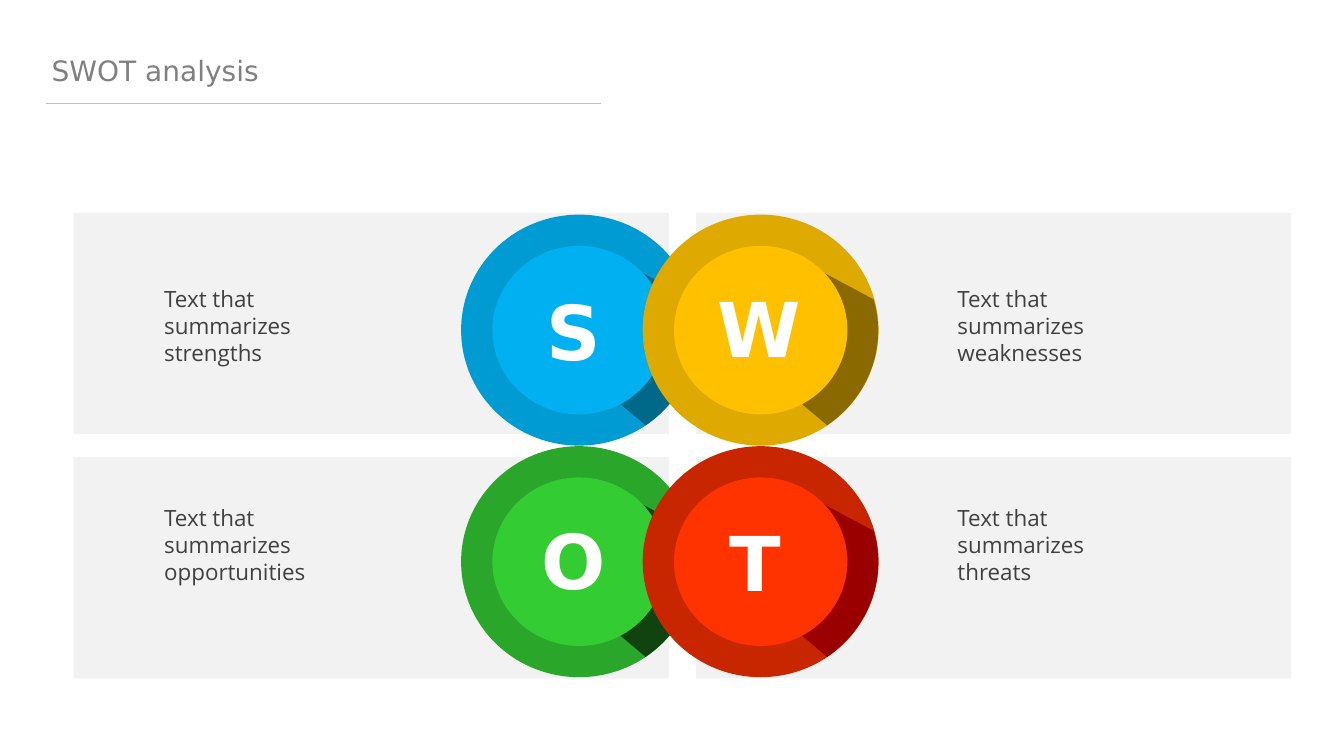
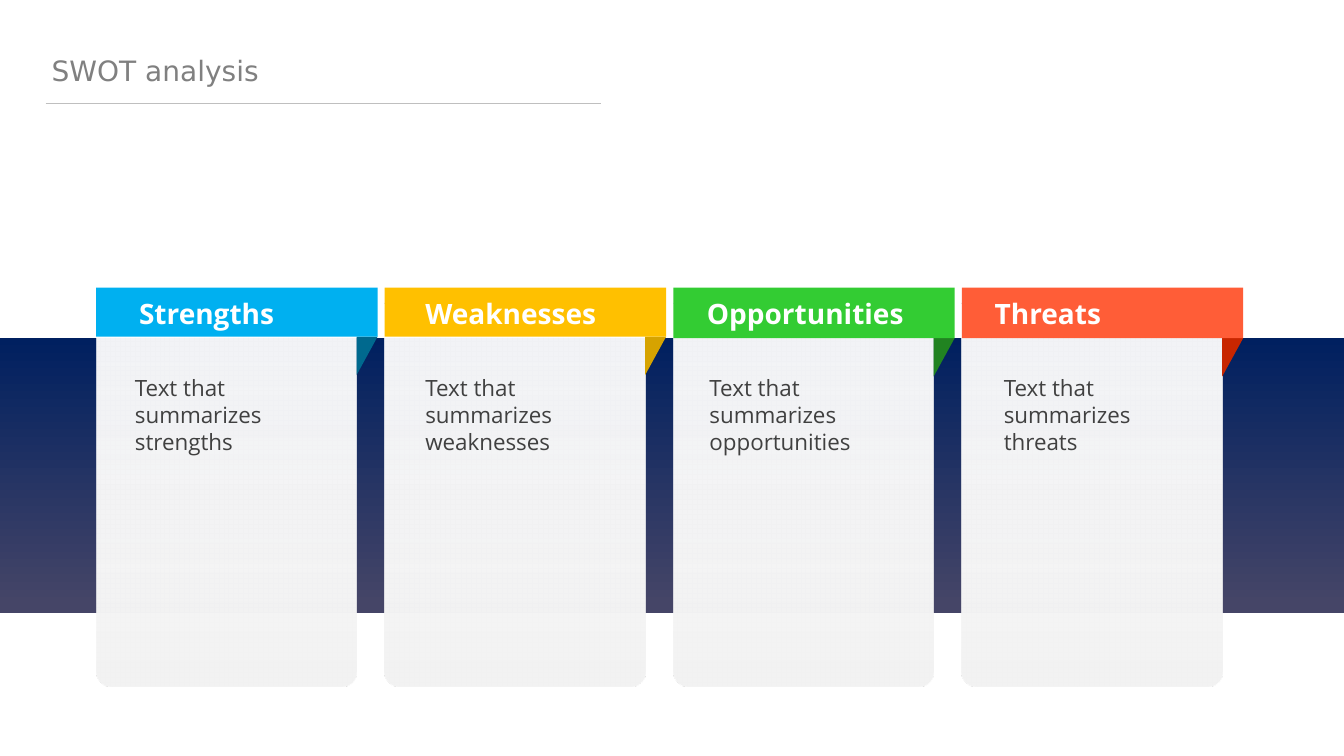
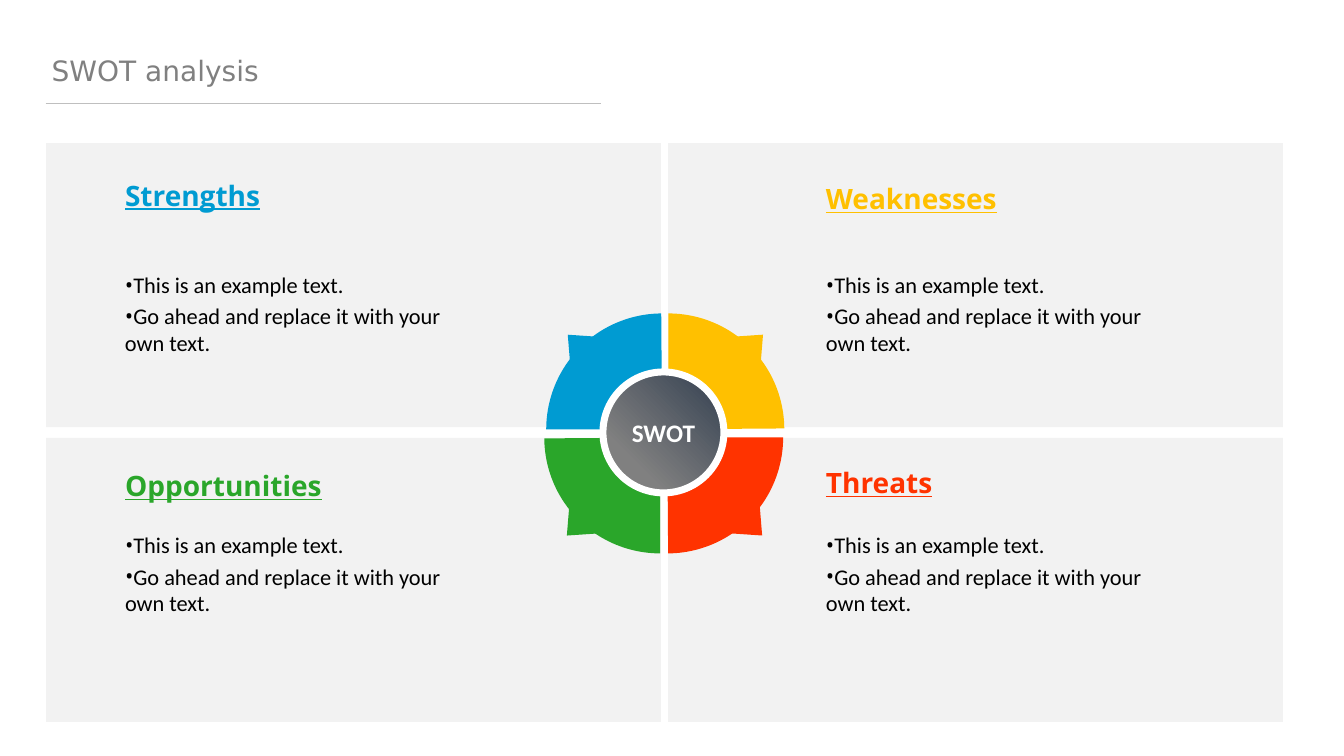
from lxml import etree
from pptx import Presentation
from pptx.dml.color import RGBColor
from pptx.enum.shapes import MSO_CONNECTOR, MSO_SHAPE
from pptx.enum.text import MSO_ANCHOR, MSO_AUTO_SIZE, PP_ALIGN
from pptx.oxml.ns import qn
from pptx.util import Pt

RECT = MSO_SHAPE.RECTANGLE
ROUND_RECT = MSO_SHAPE.ROUNDED_RECTANGLE
OVAL = MSO_SHAPE.OVAL
TRIANGLE = MSO_SHAPE.ISOSCELES_TRIANGLE
RIGHT_TRIANGLE = MSO_SHAPE.RIGHT_TRIANGLE
BLOCK_ARC = MSO_SHAPE.BLOCK_ARC
STRAIGHT = MSO_CONNECTOR.STRAIGHT
LEFT, CENTER = PP_ALIGN.LEFT, PP_ALIGN.CENTER
TOP, MIDDLE = MSO_ANCHOR.TOP, MSO_ANCHOR.MIDDLE
GROW = MSO_AUTO_SIZE.SHAPE_TO_FIT_TEXT

SLIDE_W, SLIDE_H = 960, 540
BODY_FONT, TITLE_FONT, PLAIN_FONT = "Open Sans", "DejaVu Sans", "Calibri"
WHITE, BLACK, PANEL = "FFFFFF", "000000", "F2F2F2"
TITLE_GREY, RULE_GREY, TEXT_GREY = "808080", "BFBFBF", "404040"
BLUE, YELLOW, GREEN, RED = "00B0F0", "FFC000", "33CC33", "FF3300"
DARK_BLUE, DARK_YELLOW, DARK_GREEN, DARK_RED = "009BD2", "DEA900", "2AA62A", "C82600"

TOPICS = ["Strengths", "Weaknesses", "Opportunities", "Threats"]
HEADING_WIDTHS = [112, 138, 156, 91]
EXAMPLE = ["This is an example text.", "Go ahead and replace it with your own text."]


def rgb(value):
    return RGBColor.from_string(value)


def paint(shape, color):
    shape.fill.solid()
    shape.fill.fore_color.rgb = rgb(color)


def make_flat(shape):
    shape.shadow.inherit = False
    shape.line.fill.background()


def add_shape(shapes, kind, left, top, width, height, fill=None, rotation=0, adjust=()):
    shape = shapes.add_shape(kind, Pt(left), Pt(top), Pt(width), Pt(height))
    make_flat(shape)
    shape.rotation = rotation
    for index, value in enumerate(adjust):
        shape.adjustments[index] = value
    if fill:
        paint(shape, fill)
    return shape


def paint_gradient(shape, start, end, end_position, angle, start_alpha=None):
    """Two-stop gradient; the angle runs counter-clockwise, alpha is in percent."""
    shape.fill.gradient()
    shape.fill.gradient_angle = angle
    stops = zip(shape.fill.gradient_stops, (start, end), (0, end_position))
    for stop, color, position in stops:
        stop.color.rgb = rgb(color)
        stop.position = position
    if start_alpha:
        first_color = next(shape.element.iter(qn("a:srgbClr")))
        etree.SubElement(first_color, qn("a:alpha"), val=str(start_alpha * 1000))


def write(frame, lines, font=BODY_FONT, size=16, color=TEXT_GREY, bold=False,
          underline=False, align=LEFT, anchor=TOP, wrap=True, bullet=None, before=0):
    frame.word_wrap = wrap
    frame.vertical_anchor = anchor
    for index, line in enumerate(lines):
        para = frame.paragraphs[0] if index == 0 else frame.add_paragraph()
        para.alignment = align
        para.space_before = Pt(before)
        span = para.add_run()
        span.text = line
        span.font.name, span.font.size = font, Pt(size)
        span.font.bold, span.font.underline = bold, underline
        span.font.color.rgb = rgb(color)
        if bullet:
            properties = para._p.get_or_add_pPr()
            etree.SubElement(properties, qn("a:buFont"), typeface=BODY_FONT)
            etree.SubElement(properties, qn("a:buChar"), char=bullet)


def add_text(shapes, lines, left, top, width, height, **style):
    box = shapes.add_textbox(Pt(left), Pt(top), Pt(width), Pt(height))
    write(box.text_frame, lines, **style)
    box.text_frame.auto_size = GROW


def add_heading(shapes, index, left, top, color, underline=False):
    add_text(shapes, [TOPICS[index]], left, top, HEADING_WIDTHS[index], 31.7,
             size=20, color=color, bold=True, underline=underline, wrap=False)


def add_summary(shapes, topic, left, top):
    add_text(shapes, [f"Text that summarizes {topic.lower()}"], left, top, 131, 85)


def add_titled_page(deck):
    page = deck.slides.add_slide(deck.slide_layouts[6])
    rule = page.shapes.add_connector(STRAIGHT, Pt(32.6), Pt(73.6), Pt(429.3), Pt(73.6))
    rule.line.color.rgb = rgb(RULE_GREY)
    rule.line.width = Pt(0.5)
    etree.SubElement(rule.element.spPr, qn("a:effectLst"))
    add_text(page.shapes, ["SWOT analysis"], 29.8, 34.7, 402.5, 31.7,
             font=TITLE_FONT, size=20, color=TITLE_GREY)
    return page


def grid(lefts, tops):
    """Corners of a two-by-two grid, row by row."""
    return [(left, top) for top in tops for left in lefts]


def add_panels(shapes, corners, width, height):
    for left, top in corners:
        add_shape(shapes, RECT, left, top, width, height, PANEL)


def add_cast_shade(shapes, left, top, color):
    """Shade with one curved side that follows the rim of a badge."""
    start, rim_right, end = (164.9, 60.5), (168.5, 82.5), (131.8, 150.5)
    inner, upper = (67.7, 96.5), (124.6, 38.9)
    controls = [(175, 94.3), (161.3, 130.3)]
    corners = [(Pt(left + x), Pt(top + y)) for x, y in (start, rim_right, end, inner, upper)]
    builder = shapes.build_freeform(*corners[0])
    builder.add_line_segments(corners[1:], close=True)
    shade = builder.convert_to_shape()
    make_flat(shade)
    paint(shade, color)

    # The rim point only sets the extent; one curve replaces the two lines through it.
    rim_line, end_line = list(shade.element.iter(qn("a:lnTo")))[:2]
    rim_line.getparent().remove(rim_line)
    curve = etree.Element(qn("a:cubicBezTo"))
    end_line.addprevious(curve)
    for x, y in controls:
        etree.SubElement(curve, qn("a:pt"), x=str(Pt(x - inner[0])), y=str(Pt(y - upper[1])))
    curve.append(end_line[0])
    end_line.getparent().remove(end_line)


def add_badge(page, left, top, letter, letter_shift, face, ring, shade):
    """Ringed disc with a letter and a long cast shade across the ring."""
    width, height, border = 168.5, 165, 22.3
    shapes = page.shapes.add_group_shape().shapes
    add_shape(shapes, OVAL, left, top, width, height, ring)
    add_cast_shade(shapes, left, top, shade)
    add_shape(shapes, OVAL, left + border, top + border,
              width - 2 * border, height - 2 * border, face)
    shift_x, shift_y = letter_shift
    add_text(shapes, [letter], left + shift_x, top + shift_y, 80.6, 90,
             font=TITLE_FONT, size=54, color=WHITE, bold=True)


def build_badges_page(deck):
    page = add_titled_page(deck)
    add_panels(page.shapes, grid((52.6, 497.3), (152, 326.3)), 425.2, 158.2)
    badges = [
        ((54, 46.8), BLUE, DARK_BLUE, "00698A"),
        ((46.1, 44.6), YELLOW, DARK_YELLOW, "8A6900"),
        ((50.5, 44.6), GREEN, DARK_GREEN, "114311"),
        ((54.7, 46.1), RED, DARK_RED, "9A0000"),
    ]
    for topic, corner, badge in zip(TOPICS, grid((329.4, 459.1), (153.3, 318.7)), badges):
        add_badge(page, *corner, topic[0], *badge)
    for topic, corner in zip(TOPICS, grid((110.2, 676.8), (200.2, 356.4))):
        add_summary(page.shapes, topic, *corner)


def add_ribbon(page, left, height, color, fold_color):
    """Header strip whose right end folds back behind the card."""
    top, width, fold_w, fold_h = 205.5, 201, 15, 27.4
    shapes = page.shapes.add_group_shape().shapes
    center_x = left + width - fold_w / 2
    center_y = top + height + fold_h / 2
    add_shape(shapes, RIGHT_TRIANGLE, center_x - fold_h / 2, center_y - fold_w / 2,
              fold_h, fold_w, fold_color, rotation=90)
    add_shape(shapes, RECT, left, top, width, height, color)


def build_cards_page(deck):
    page = add_titled_page(deck)
    shapes = page.shapes
    band = add_shape(shapes, RECT, 0, 241.3, SLIDE_W, 196.7)
    paint_gradient(band, "002060", "454567", 0.97, 270)
    ribbons = [
        (35, BLUE, "00698E", 92.2, 89.3),
        (35, YELLOW, "D6A300", 296.7, 296.7),
        (36, GREEN, "218321", 497.8, 499.7),
        (36, "FF5D37", DARK_RED, 703.4, 709.9),
    ]
    for index, (height, color, fold_color, heading_left, text_left) in enumerate(ribbons):
        left = 68.7 + 206.1 * index
        card = add_shape(shapes, ROUND_RECT, left, 209, 186, 281.5, adjust=[0.06])
        paint_gradient(card, WHITE, PANEL, 0.97, 270, start_alpha=94)
        add_ribbon(page, left, height, color, fold_color)
        add_heading(shapes, index, heading_left, 208.2, WHITE)
        add_summary(shapes, TOPICS[index], text_left, 264)


def build_wheel_page(deck):
    page = add_titled_page(deck)
    shapes = page.shapes
    add_panels(shapes, grid((33, 477.2), (102.2, 312.7)), 439.2, 203)
    quadrants = [
        (DARK_BLUE, 0, 0.253, (390.2, 223.9), 314.6, (82.2, 123.8)),
        (YELLOW, 90, 0.257, (394.6, 223.9), 45.4, (582.9, 126)),
        (DARK_GREEN, 270, 0.257, (388.8, 229.7), 225.4, (82.2, 331.2)),
        (RED, 180, 0.257, (393.8, 229.7), 134.6, (582.9, 329)),
    ]
    pointers = grid((396.5, 523.1), [236.4]) + grid((395.8, 522.5), [367.2])
    for index, (quadrant, pointer) in enumerate(zip(quadrants, pointers)):
        color, turn, thickness, arc_corner, pointer_turn, heading_corner = quadrant
        add_shape(shapes, BLOCK_ARC, *arc_corner, 165.6, 165.6, color,
                  rotation=turn, adjust=[108, 161.73, thickness])
        add_shape(shapes, TRIANGLE, *pointer, 31, 18, color, rotation=pointer_turn)
        add_heading(shapes, index, *heading_corner, color, underline=True)

    hub = add_shape(shapes, OVAL, 430.7, 265.7, 86.4, 86.4)
    paint_gradient(hub, "333F50", "808080", 0.75, 225)
    hub.line.color.rgb = rgb(WHITE)
    hub.line.width = Pt(5)
    write(hub.text_frame, ["SWOT"], font=PLAIN_FONT, size=18, color=WHITE, bold=True,
          align=CENTER, anchor=MIDDLE)

    for (left, top), width in zip(grid((82.2, 582.9), (190.1, 376)), (263.5, 263.5, 242, 242)):
        add_text(shapes, EXAMPLE, left, top, width, 69,
                 font=PLAIN_FONT, color=BLACK, bullet="•", before=3.2)


def main():
    deck = Presentation()
    deck.slide_width, deck.slide_height = Pt(SLIDE_W), Pt(SLIDE_H)
    build_badges_page(deck)
    build_cards_page(deck)
    build_wheel_page(deck)
    deck.save("out.pptx")


if __name__ == "__main__":
    main()
